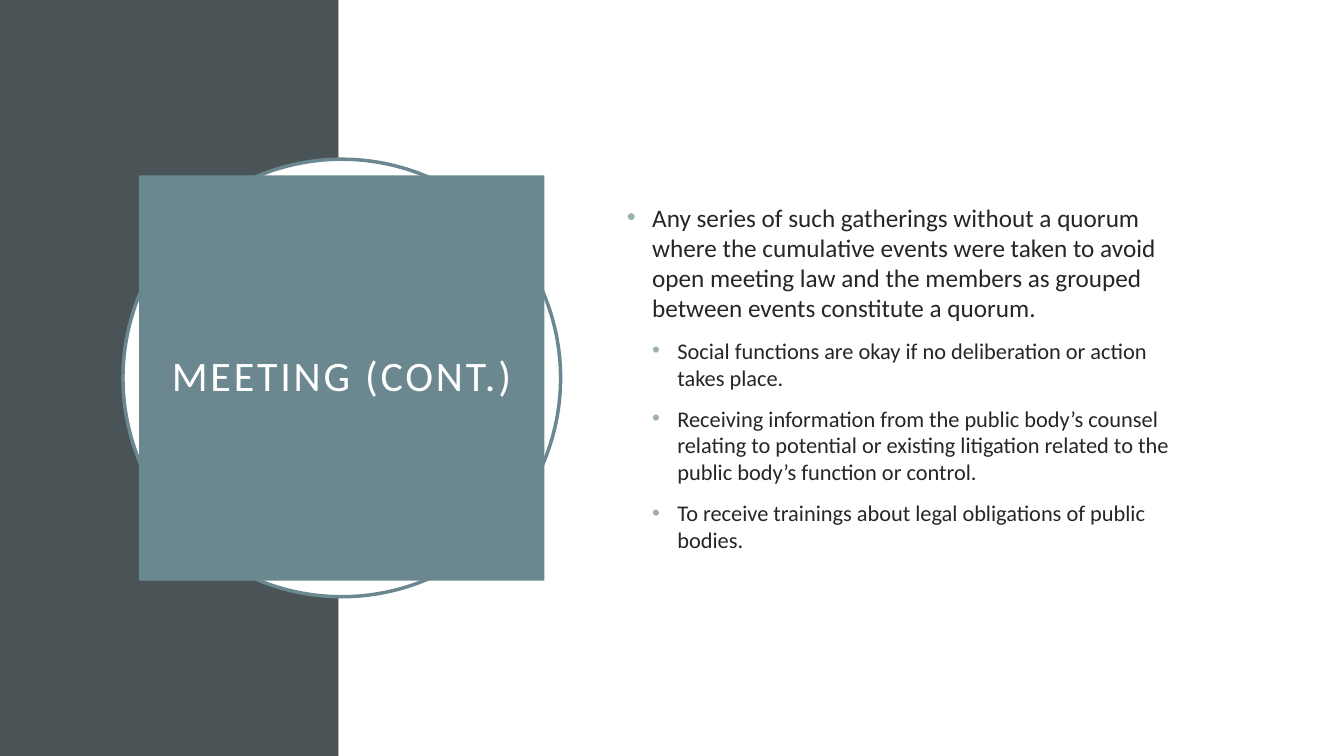
from lxml.etree import SubElement as Sub
from pptx import Presentation
from pptx.dml.color import RGBColor
from pptx.enum.shapes import MSO_SHAPE as Kind
from pptx.enum.text import MSO_ANCHOR as Anchor, PP_ALIGN as Align
from pptx.oxml.ns import qn
from pptx.util import Inches, Pt

DARK, TEAL, PALE, INK, WHITE = "4A5356", "6B8891", "9BAFB5", "262626", "FFFFFF"
WIDE, HIGH, SPLIT = 13.33, 7.5, 3.36
POINTS = [
    (0, "Any series of such gatherings without a quorum where the cumulative events were taken "
        "to avoid open meeting law and the members as grouped between events constitute a quorum."),
    (1, "Social functions are okay if no deliberation or action takes place."),
    (1, "Receiving information from the public body’s counsel relating to potential or existing "
        "litigation related to the public body’s function or control."),
    (1, "To receive trainings about legal obligations of public bodies."),
]


def paint(color, code):
    """Give a fill, line or font colour its hex value."""
    color.rgb = RGBColor.from_string(code)


def form(slide, kind, box, fill, line=None):
    """Add a flat shape, outlined only if a line colour is given."""
    shape = slide.shapes.add_shape(kind, *map(Inches, box))
    shape.shadow.inherit = False
    shape.fill.solid()
    paint(shape.fill.fore_color, fill)
    if line:
        paint(shape.line.color, line)
        shape.line.width = Pt(2.5)
    else:
        shape.line.fill.background()
    return shape


def write(para, text, size, code):
    """Add one run of text to a paragraph."""
    run = para.add_run()
    run.text = text
    run.font.name = "Calibri"
    run.font.size = Pt(size)
    paint(run.font.color, code)
    return run


def bullet(para, level):
    """Set a hanging indent and a pale dot for the level."""
    props = para._p.get_or_add_pPr()
    props.set("marL", str(Inches(0.25 * (level + 1))))
    props.set("indent", str(Inches(-0.25)))
    Sub(Sub(props, qn("a:buClr")), qn("a:srgbClr"), val=PALE)
    Sub(props, qn("a:buFont"), typeface="Arial")
    Sub(props, qn("a:buChar"), char="•")


def ground(slide, box):
    """Split the box into a dark band and a white field."""
    left, top, width, height = box
    form(slide, Kind.RECTANGLE, (left, top, SPLIT, height), DARK)
    form(slide, Kind.RECTANGLE, (left + SPLIT, top, width - SPLIT, height), WHITE)


def badge(slide, box, title):
    """Draw a ringed disc with the title block inset in it."""
    left, top, width, height = box
    gap = 0.16
    form(slide, Kind.OVAL, box, WHITE, TEAL)
    inner = (left + gap, top + gap, width - 2 * gap, height - 2 * gap)
    frame = form(slide, Kind.RECTANGLE, inner, TEAL).text_frame
    frame.word_wrap = True
    frame.vertical_anchor = Anchor.MIDDLE
    frame.margin_left = frame.margin_right = Inches(0.2)
    frame.margin_top = frame.margin_bottom = Inches(0.2)
    para = frame.paragraphs[0]
    para.alignment = Align.CENTER
    para.line_spacing = 0.9
    run = write(para, title, 30, WHITE)
    run.font._element.set("spc", "200")


def body(slide, box, points):
    """Set the bulleted points in the middle of the box."""
    frame = slide.shapes.add_textbox(*map(Inches, box)).text_frame
    frame.word_wrap = True
    frame.vertical_anchor = Anchor.MIDDLE
    for rank, (level, text) in enumerate(points):
        para = frame.add_paragraph() if rank else frame.paragraphs[0]
        para.level = level
        para.space_before = Pt(10)
        bullet(para, level)
        write(para, text, 18 - 2 * level, INK)


def main():
    """Build and save the slide."""
    deck = Presentation()
    deck.slide_width, deck.slide_height = Inches(WIDE), Inches(HIGH)
    slide = deck.slides.add_slide(deck.slide_layouts[6])
    ground(slide, (0, 0, WIDE, HIGH))
    badge(slide, (1.22, 1.58, 4.34, 4.34), "MEETING (CONT.)")
    body(slide, (6.12, 1.53, 5.82, 4.43), POINTS)
    deck.save("out.pptx")


if __name__ == "__main__":
    main()
